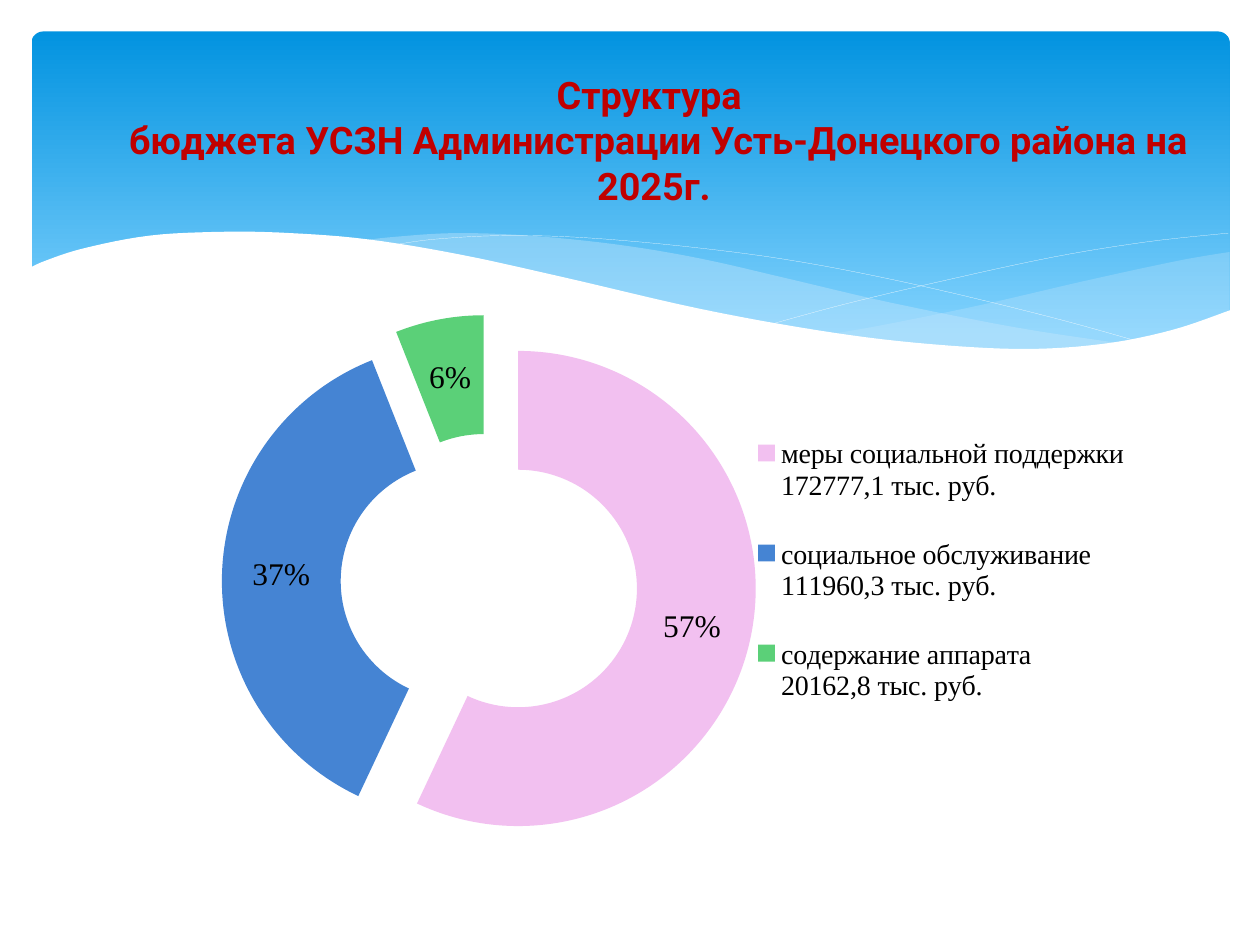
from dataclasses import dataclass

from lxml.etree import SubElement
from pptx import Presentation
from pptx.chart.data import CategoryChartData
from pptx.dml.color import RGBColor
from pptx.enum.chart import XL_CHART_TYPE, XL_LEGEND_POSITION
from pptx.enum.shapes import MSO_SHAPE
from pptx.enum.text import MSO_ANCHOR, PP_ALIGN
from pptx.oxml import parse_xml
from pptx.oxml.ns import nsdecls, qn
from pptx.util import Inches, Pt

# Content
TITLE = ["Структура ", " бюджета УСЗН Администрации Усть-Донецкого района на 2025г."]
BUDGET = [  # category, amount, share, colour
    ("меры социальной поддержки", "172777,1 тыс. руб.", 57, "F2C0F0"),
    ("социальное обслуживание", "111960,3 тыс. руб.", 37, "4584D3"),
    ("содержание аппарата", "20162,8 тыс. руб.", 6, "5BD078"),
]


@dataclass(frozen=True)
class Theme:
    sky_top: str = "0293E0"
    sky_bottom: str = "83D3FE"
    wave: str = "C6E7FC"
    white: str = "FFFFFF"
    title: str = "C00000"
    text: str = "000000"
    title_font: str = "Roboto"
    chart_font: str = "Calibri"
    label_font: str = "Times New Roman"
    title_size: float = 21.6
    label_size: float = 18
    legend_size: float = 16
    hairline: float = 0.1


THEME = Theme()
WIDTH, HEIGHT = 10, 7.5

# Wave outlines in inches: each is a list of smooth curves joined at corners
RIGHT_WAVE = [
    [(9.76, 2), (9.35, 2.07), (8.61, 2.23), (7.79, 2.42), (7.06, 2.57), (6.61, 2.65)],
    [(6.61, 2.65), (7.19, 2.72), (7.69, 2.77), (8.14, 2.78), (8.63, 2.75),
     (9.13, 2.67), (9.49, 2.57), (9.76, 2.47)],
]
LONG_WAVE = [
    [(8.93, 2.73), (8.07, 2.6), (7.06, 2.4), (6.29, 2.22), (5.55, 2.05), (4.89, 1.94),
     (4.2, 1.87), (3.61, 1.85), (3.13, 1.88), (2.86, 1.91)],
    [(2.86, 1.91), (3.62, 2.03), (4.49, 2.22), (5.3, 2.4), (6.18, 2.58), (6.95, 2.7),
     (7.61, 2.77), (8.18, 2.78), (8.57, 2.77), (8.93, 2.73)],
]
FALLING_LINE = [[(3.09, 1.95), (3.44, 1.9), (4.01, 1.87), (4.69, 1.89), (5.56, 1.97),
                 (6.36, 2.08), (7.27, 2.26), (8.31, 2.51), (9.07, 2.72)]]
RISING_LINE = [[(6.13, 2.57), (6.72, 2.41), (7.48, 2.23), (8.36, 2.04), (9.1, 1.92),
                (9.75, 1.85)]]
WHITE_WAVE = [
    [(9.77, 2.46), (9.3, 2.62), (8.75, 2.73), (8.09, 2.77), (7.26, 2.72), (6.48, 2.62),
     (5.55, 2.45), (4.47, 2.2), (3.65, 2.02), (2.92, 1.9), (2.3, 1.85), (1.77, 1.84),
     (1.19, 1.87), (0.67, 1.97), (0.36, 2.07), (0.23, 2.13)],
    [(0.23, 3.29), (9.77, 3.29)],
]


def color(value):
    return RGBColor.from_string(value)


def smooth(points, steps=6):
    """Catmull-Rom curve through the points."""
    padded = [points[0], *points, points[-1]]
    curve = [points[0]]
    for a, b, c, d in zip(padded, padded[1:], padded[2:], padded[3:]):
        for step in range(1, steps + 1):
            t = step / steps
            curve.append(tuple(
                (2 * q + (r - p) * t + (2 * p - 5 * q + 4 * r - s) * t ** 2
                 + (3 * q - p - 3 * r + s) * t ** 3) / 2
                for p, q, r, s in zip(a, b, c, d)))
    return curve


def add_wave(slide, curves, fill=None, alpha=100):
    """Filled wave, or a white hairline when no fill is given."""
    points = [(Inches(x), Inches(y)) for curve in curves for x, y in smooth(curve)]
    builder = slide.shapes.build_freeform(*points[0], scale=1.0)
    builder.add_line_segments(points[1:], close=fill is not None)
    shape = builder.convert_to_shape()
    shape.shadow.inherit = False
    if fill is None:
        shape.fill.background()
        shape.line.color.rgb = color(THEME.white)
        shape.line.width = Pt(THEME.hairline)
        return
    shape.fill.solid()
    shape.fill.fore_color.rgb = color(fill)
    shape.line.fill.background()
    if alpha < 100:
        fill_color = shape.fill._xPr.find(qn("a:solidFill"))[0]
        SubElement(fill_color, qn("a:alpha")).set("val", str(alpha * 1000))


def add_banner(slide):
    margin = 0.25
    banner = slide.shapes.add_shape(
        MSO_SHAPE.ROUNDED_RECTANGLE, Inches(margin), Inches(margin),
        Inches(WIDTH - 2 * margin + 0.01), Inches(2.7))
    banner.adjustments[0] = 0.034
    banner.shadow.inherit = False
    banner.line.fill.background()
    banner.fill.gradient()
    banner.fill.gradient_angle = 270
    stops = [(0, THEME.sky_top), (0.9, THEME.sky_bottom)]
    for stop, (position, value) in zip(banner.fill.gradient_stops, stops):
        stop.position = position
        stop.color.rgb = color(value)
    add_wave(slide, RIGHT_WAVE, THEME.wave, 29)
    add_wave(slide, LONG_WAVE, THEME.wave, 40)
    add_wave(slide, FALLING_LINE)
    add_wave(slide, RISING_LINE)
    add_wave(slide, WHITE_WAVE, THEME.white)


def add_layout(parent, x, y, w, h, inner=False):
    """Manual placement, as shares of the chart area."""
    target = '<c:layoutTarget val="inner"/>' if inner else ""
    sizes = "".join(f'<c:{tag} val="{value}"/>' for tag, value in zip("xywh", (x, y, w, h)))
    for old in parent.findall(qn("c:layout")):
        parent.remove(old)
    layout = parse_xml(
        f'<c:layout {nsdecls("c")}><c:manualLayout>{target}<c:xMode val="edge"/>'
        f'<c:yMode val="edge"/>{sizes}</c:manualLayout></c:layout>')
    parent.insert(0 if inner else 1, layout)


def add_budget_chart(slide):
    data = CategoryChartData()
    data.categories = [f"{name}\n{amount}" for name, amount, _, _ in BUDGET]
    data.add_series("Series 1", [share for _, _, share, _ in BUDGET])
    chart = slide.shapes.add_chart(
        XL_CHART_TYPE.DOUGHNUT, Inches(0.59), Inches(2.02), Inches(9.21), Inches(5.2),
        data).chart
    chart.has_title = False
    chart.font.name = THEME.chart_font
    chart.font.size = Pt(THEME.label_size)
    chart.font.color.rgb = color(THEME.text)
    add_layout(chart._chartSpace.chart.plotArea, 0.068, 0.092, 0.579, 0.816, inner=True)

    # Slices, pulled apart
    plot = chart.plots[0]
    plot.vary_by_categories = True
    series = plot.series[0]
    for index, (_, _, _, value) in enumerate(BUDGET):
        point = series.points[index]
        point.format.fill.solid()
        point.format.fill.fore_color.rgb = color(value)
        point.format.line.fill.background()
    explosion = parse_xml(f'<c:explosion {nsdecls("c")} val="25"/>')
    series._element.find(qn("c:dPt")).addprevious(explosion)

    # Percentages
    labels = series.data_labels
    labels.show_percentage = True
    labels.show_value = False
    labels.number_format = "0%"
    labels.number_format_is_linked = False
    labels.font.name = THEME.label_font
    labels.font.size = Pt(THEME.label_size)
    labels.font.color.rgb = color(THEME.text)

    # Legend
    chart.has_legend = True
    legend = chart.legend
    legend.position = XL_LEGEND_POSITION.RIGHT
    legend.include_in_layout = False
    legend.font.name = THEME.label_font
    legend.font.size = Pt(THEME.legend_size)
    legend.font.color.rgb = color(THEME.text)
    add_layout(legend._element, 0.567, 0.225, 0.36, 0.515)


def add_title(slide):
    box = slide.shapes.add_textbox(Inches(0.5), Inches(0.33), Inches(9.38), Inches(1.56))
    text_frame = box.text_frame
    text_frame.word_wrap = True
    text_frame.vertical_anchor = MSO_ANCHOR.MIDDLE
    text_frame.text = "\v".join(TITLE)
    paragraph = text_frame.paragraphs[0]
    paragraph.alignment = PP_ALIGN.CENTER
    for run in paragraph.runs:
        font = run.font
        font.name, font.size, font.bold = THEME.title_font, Pt(THEME.title_size), True
        font.color.rgb = color(THEME.title)


def main():
    presentation = Presentation()
    presentation.slide_width, presentation.slide_height = Inches(WIDTH), Inches(HEIGHT)
    slide = presentation.slides.add_slide(presentation.slide_layouts[6])
    add_banner(slide)
    add_budget_chart(slide)
    add_title(slide)
    presentation.save("out.pptx")


if __name__ == "__main__":
    main()
